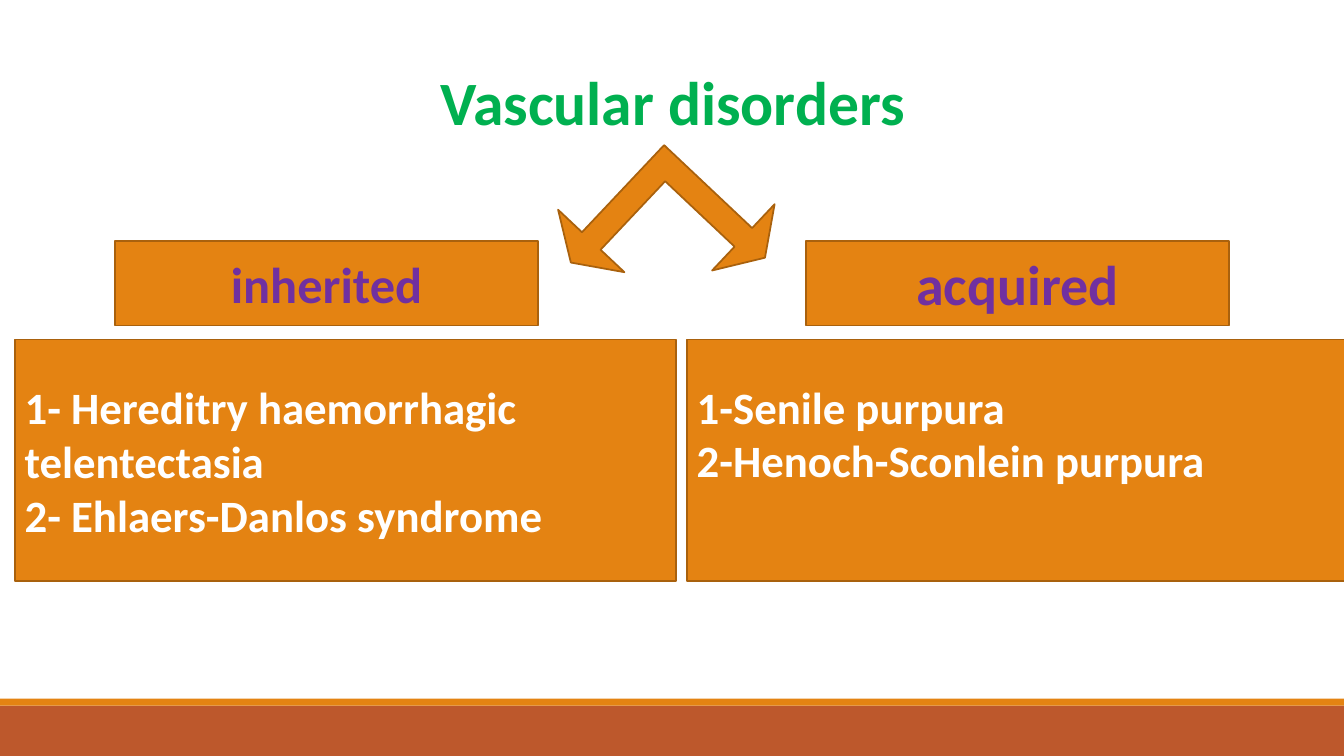
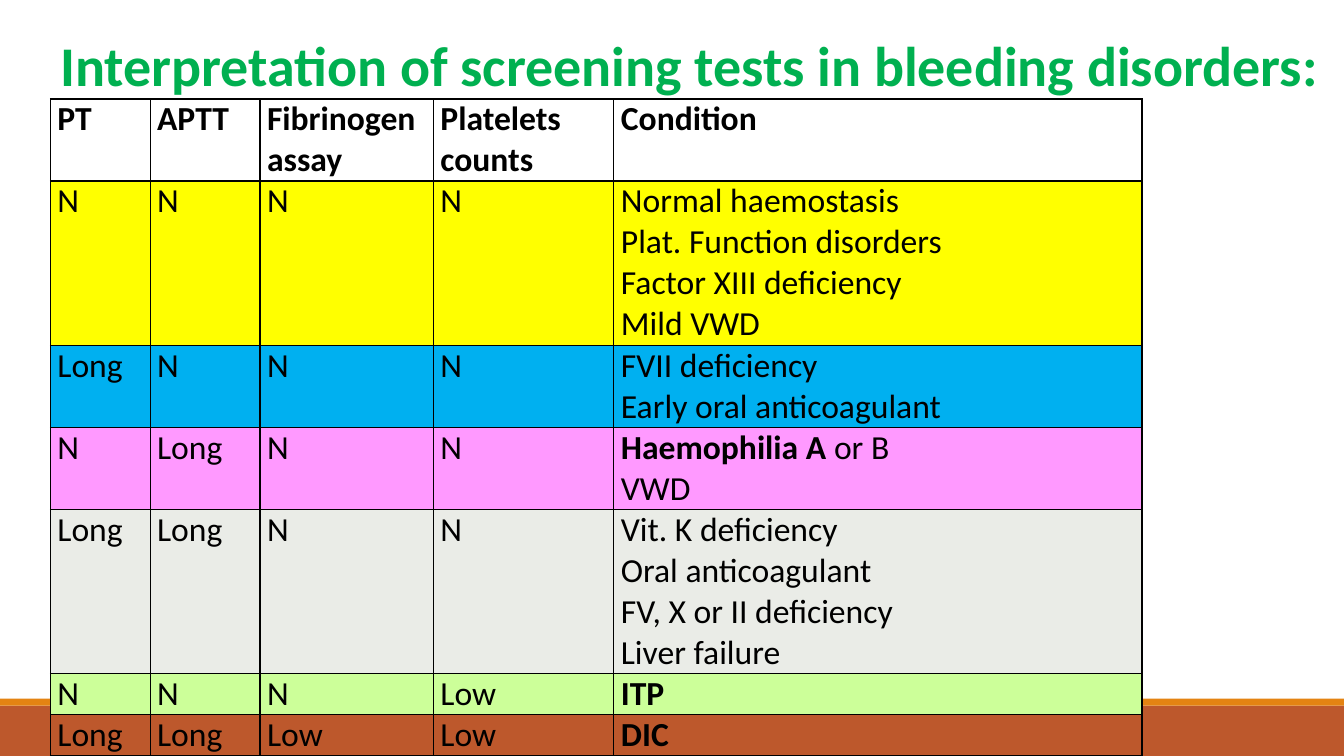
from dataclasses import dataclass

from lxml.etree import SubElement
from pptx import Presentation
from pptx.dml.color import RGBColor
from pptx.enum.shapes import MSO_SHAPE
from pptx.enum.text import MSO_ANCHOR, MSO_AUTO_SIZE, PP_ALIGN
from pptx.oxml.ns import qn
from pptx.util import Inches, Pt


@dataclass(frozen=True)
class Theme:
    font: str = "Calibri"
    title: str = "00B050"
    heading: str = "7030A0"
    body: str = "FFFFFF"
    ink: str = "000000"
    panel: str = "E48312"
    outline: str = "A9610D"
    base: str = "BD582C"
    normal: str = "FFFF00"
    factor_seven: str = "00B0F0"
    haemophilia: str = "FF99FF"
    combined: str = "EAECE7"
    platelets: str = "CCFF99"
    title_size: int = 44
    long_title_size: int = 40
    inherited_size: int = 36
    acquired_size: int = 40
    body_size: int = 32
    table_size: int = 24
    outline_width: float = 1.25
    border_width: float = 1


THEME = Theme()


class SlideBuilder:
    """Draws on a grid of 100 columns by 100 rows per slide."""

    def __init__(self, theme):
        self.theme = theme
        self.deck = Presentation()
        self.deck.slide_width, self.deck.slide_height = Inches(13.33), Inches(7.5)
        self.page = None

    def columns(self, count):
        return round(self.deck.slide_width * count / 100)

    def rows(self, count):
        return round(self.deck.slide_height * count / 100)

    def place(self, left, top, width, height):
        return (self.columns(left), self.rows(top),
                self.columns(width), self.rows(height))

    def set_text(self, frame, lines, size, color, bold=False, align=PP_ALIGN.LEFT):
        """Add one paragraph per line; text between asterisks is bold."""
        frame.word_wrap = True
        for index, line in enumerate(lines):
            para = frame.add_paragraph() if index else frame.paragraphs[0]
            para.alignment = align
            para.font.name = self.theme.font
            para.font.size = Pt(size)
            para.font.bold = bold
            para.font.color.rgb = RGBColor.from_string(color)
            for part, words in enumerate(line.split("*")):
                if words:
                    span = para.add_run()
                    span.text = words
                    if part % 2:
                        span.font.bold = True

    def add_page(self, title, area, size, spacing=1.0):
        self.page = self.deck.slides.add_slide(self.deck.slide_layouts[5])
        box = self.page.shapes.title
        box.left, box.top, box.width, box.height = self.place(*area)
        frame = box.text_frame
        frame.auto_size = MSO_AUTO_SIZE.NONE
        frame.vertical_anchor = MSO_ANCHOR.TOP
        self.set_text(frame, [title], size, self.theme.title, bold=True)
        frame.paragraphs[0].line_spacing = spacing

    def shape(self, kind, area, fill, outline=None):
        box = self.page.shapes.add_shape(kind, *self.place(*area))
        box.shadow.inherit = False
        box.fill.solid()
        box.fill.fore_color.rgb = RGBColor.from_string(fill)
        if outline:
            box.line.color.rgb = RGBColor.from_string(outline)
            box.line.width = Pt(self.theme.outline_width)
        else:
            box.line.fill.background()
        return box

    def master_band(self, number, top, height, fill):
        """Move a full-width band to the master, below its placeholders."""
        band = self.shape(MSO_SHAPE.RECTANGLE, (0, top, 100, height), fill).element
        band.nvSpPr.cNvPr.id = 100 + number
        self.deck.slide_master.element.cSld.spTree.insert(2 + number, band)

    def panel(self, area, lines, size, color, align=PP_ALIGN.LEFT, bottom=0.05):
        box = self.shape(MSO_SHAPE.RECTANGLE, area, self.theme.panel, self.theme.outline)
        box.text_frame.vertical_anchor = MSO_ANCHOR.MIDDLE
        box.text_frame.margin_bottom = Inches(bottom)
        self.set_text(box.text_frame, lines, size, color, bold=True, align=align)

    def fork_arrow(self, area, rotation, adjustments):
        arrow = self.shape(MSO_SHAPE.LEFT_UP_ARROW, area,
                           self.theme.panel, self.theme.outline)
        arrow.rotation = rotation
        for index, value in enumerate(adjustments):
            arrow.adjustments[index] = value

    def border(self, cell):
        properties = cell._tc.get_or_add_tcPr()
        for side in ("lnL", "lnR", "lnT", "lnB"):
            line = SubElement(properties, qn(f"a:{side}"),
                              w=str(Pt(self.theme.border_width)))
            fill = SubElement(line, qn("a:solidFill"))
            SubElement(fill, qn("a:srgbClr"), val=self.theme.ink)

    def table(self, left, top, widths, line_height, records):
        """Each record is (fill, lines of text in the row, cells)."""
        area = self.place(left, top, sum(widths),
                          line_height * sum(record[1] for record in records))
        grid = self.page.shapes.add_table(len(records), len(widths), *area).table
        grid.first_row = grid.horz_banding = False
        for column, width in zip(grid.columns, widths):
            column.width = self.columns(width)
        for index, (fill, line_count, cells) in enumerate(records):
            grid.rows[index].height = self.rows(line_height * line_count)
            for cell, text in zip(grid.rows[index].cells, cells):
                cell.margin_left = cell.margin_right = Inches(0.07)
                cell.margin_top = cell.margin_bottom = 0
                self.border(cell)
                if fill:
                    cell.fill.solid()
                    cell.fill.fore_color.rgb = RGBColor.from_string(fill)
                else:
                    cell.fill.background()
                self.set_text(cell.text_frame, text.split("\n"), self.theme.table_size,
                              self.theme.ink, bold=index == 0)


def vascular_disorders(builder):
    theme = builder.theme
    builder.add_page("Vascular disorders", (32, 7.8, 36.6, 11.2), theme.title_size)
    builder.master_band(0, 93.33, 6.67, theme.base)
    builder.master_band(1, 92.4, 0.93, theme.panel)
    builder.fork_arrow((42.8, 18.1, 13.65, 24.1), 223.3, (0.14, 0.25, 0.163))
    groups = (
        ("inherited", theme.inherited_size, 8.55, 1.1, 0.05,
         ["1- Hereditry haemorrhagic telentectasia", "2- Ehlaers-Danlos syndrome"]),
        ("acquired", theme.acquired_size, 59.95, 51.1, 0.59,
         ["1-Senile purpura", "2-Henoch-Sconlein purpura"]),
    )
    for heading, size, heading_left, body_left, bottom, lines in groups:
        builder.panel((heading_left, 31.85, 31.5, 11.2), [heading], size,
                      theme.heading, PP_ALIGN.CENTER)
        builder.panel((body_left, 44.9, 49.2, 32), lines, theme.body_size,
                      theme.body, bottom=bottom)


def screening_tests(builder):
    theme = builder.theme
    builder.add_page("Interpretation of screening tests in bleeding disorders:",
                     (3.75, 2, 98.1, 11.1), theme.long_title_size, 1.15)
    records = (
        (None, 2, ("PT", "APTT", "Fibrinogen assay", "Platelets counts", "Condition")),
        (theme.normal, 4, ("N", "N", "N", "N",
                           "Normal haemostasis\nPlat. Function disorders\n"
                           "Factor XIII deficiency\nMild VWD")),
        (theme.factor_seven, 2, ("Long", "N", "N", "N",
                                 "FVII deficiency\nEarly oral anticoagulant")),
        (theme.haemophilia, 2, ("N", "Long", "N", "N", "*Haemophilia A* or B\nVWD")),
        (theme.combined, 4, ("Long", "Long", "N", "N",
                             "Vit. K deficiency\nOral anticoagulant\n"
                             "FV, X or II deficiency\nLiver failure")),
        (theme.platelets, 1, ("N", "N", "N", "Low", "*ITP*")),
        (None, 1, ("Long", "Long", "Low", "Low", "*DIC*")),
    )
    builder.table(3.75, 13.1, (7.42, 8.18, 12.9, 13.43, 39.3), 5.3, records)


def main():
    builder = SlideBuilder(THEME)
    vascular_disorders(builder)
    screening_tests(builder)
    builder.deck.save("out.pptx")


if __name__ == "__main__":
    main()
